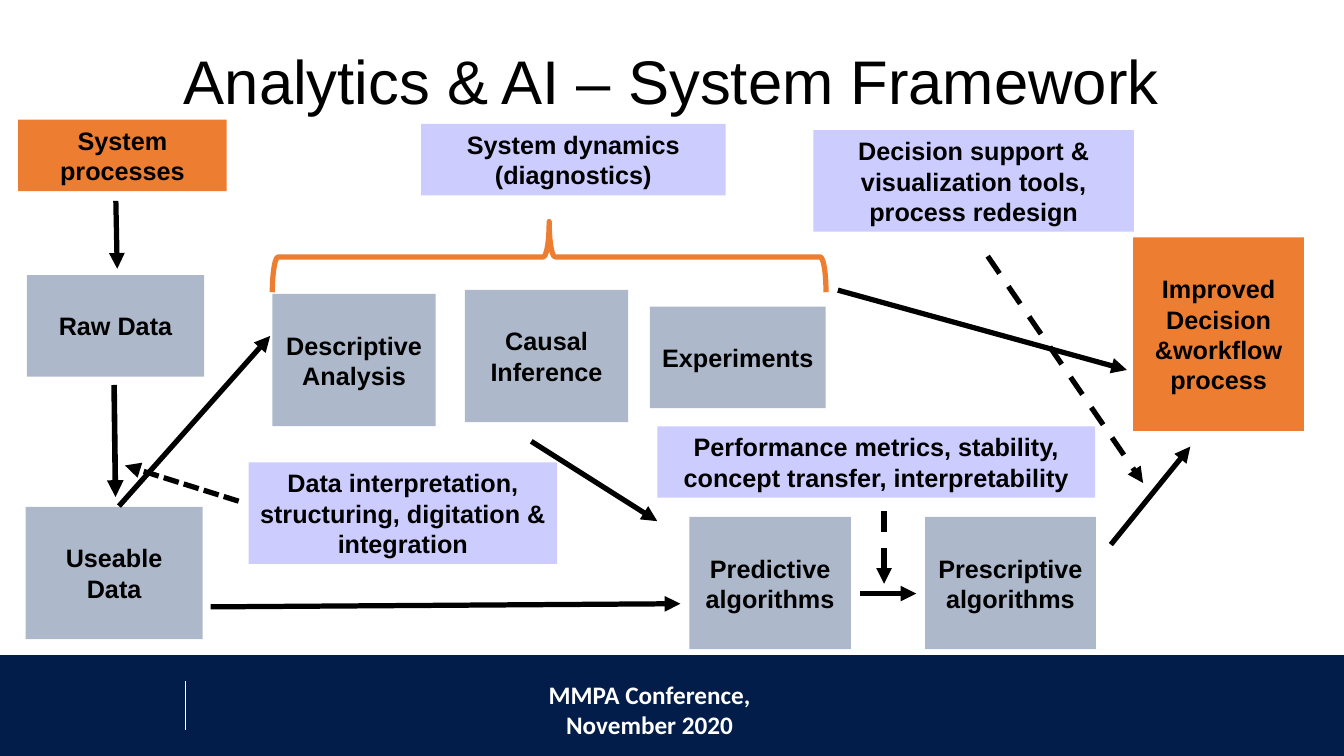
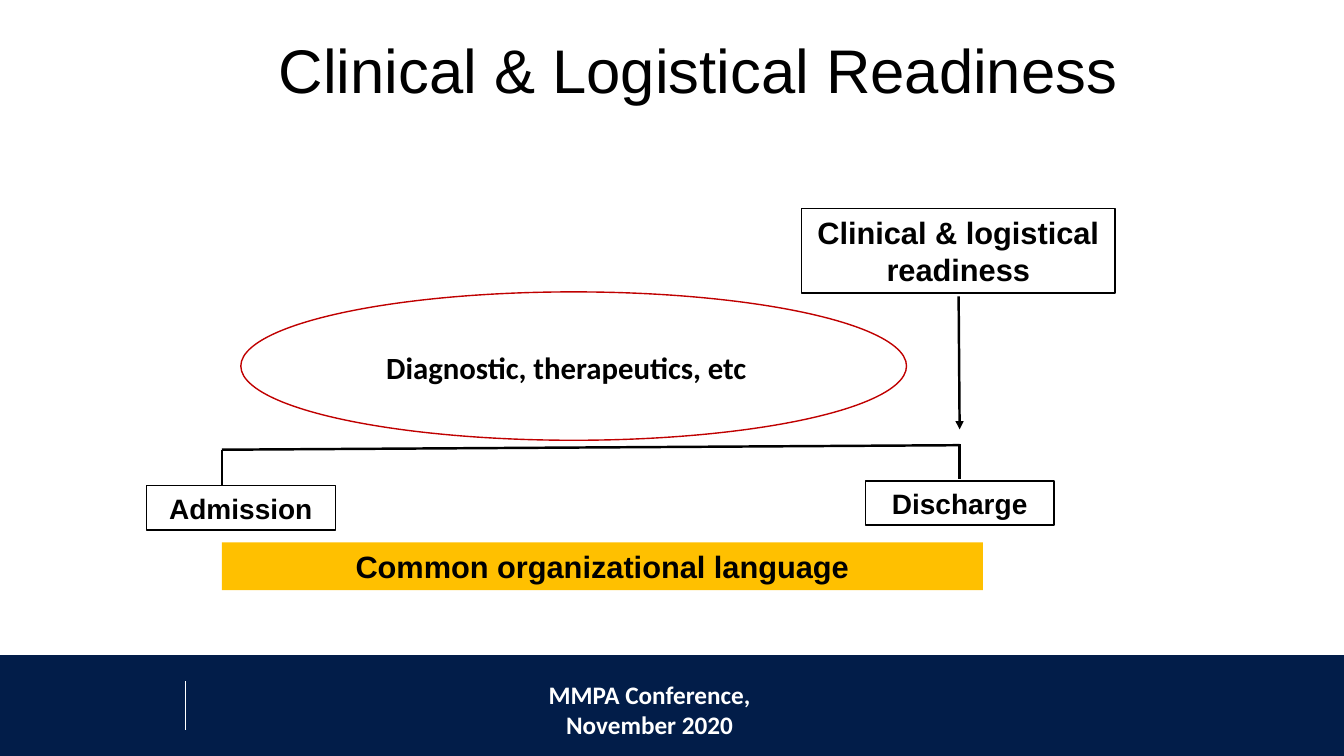
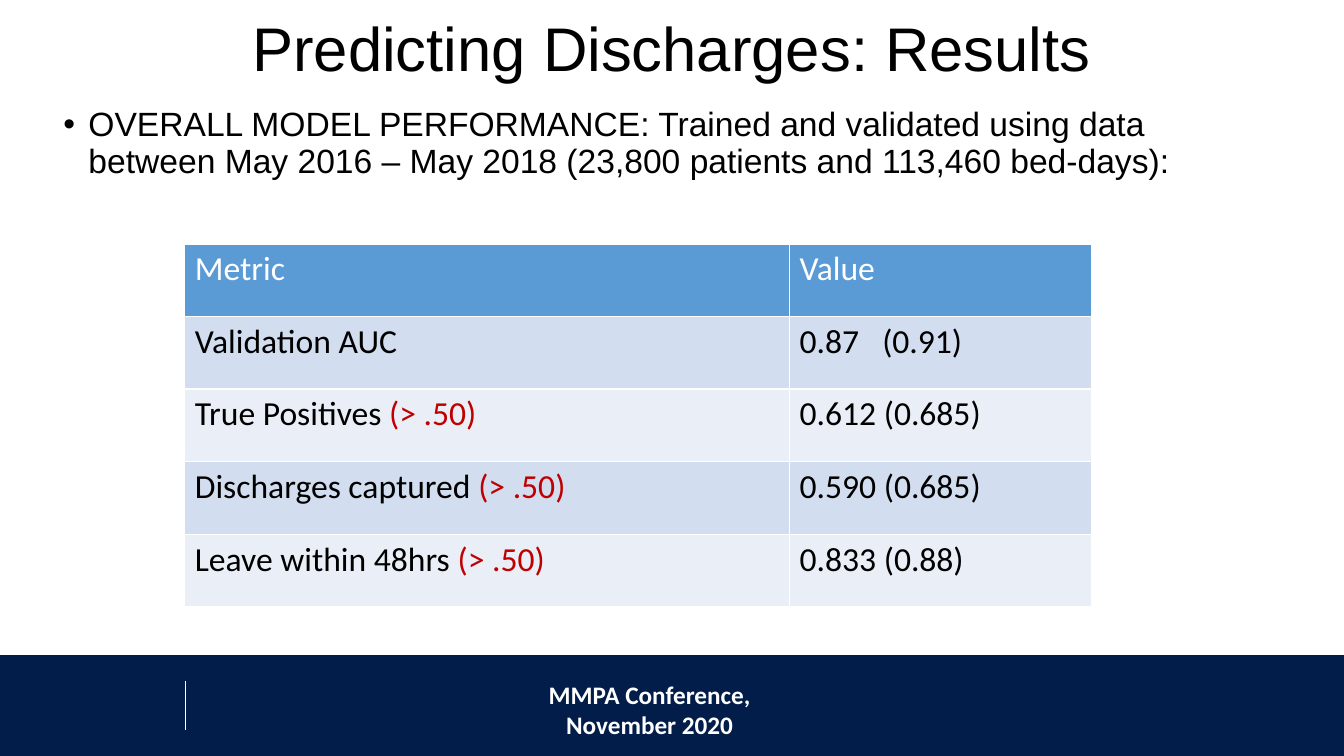
from lxml import etree
from pptx import Presentation
from pptx.dml.color import RGBColor
from pptx.enum.dml import MSO_LINE_DASH_STYLE
from pptx.enum.shapes import MSO_CONNECTOR, MSO_SHAPE
from pptx.enum.text import MSO_ANCHOR, MSO_AUTO_SIZE, PP_ALIGN
from pptx.oxml.ns import qn
from pptx.util import Pt

RECT, OVAL, BRACE = MSO_SHAPE.RECTANGLE, MSO_SHAPE.OVAL, MSO_SHAPE.LEFT_BRACE
STRAIGHT = MSO_CONNECTOR.STRAIGHT
DASH, SHORT_DASH = MSO_LINE_DASH_STYLE.DASH, MSO_LINE_DASH_STYLE.SQUARE_DOT
CENTER, LEFT = PP_ALIGN.CENTER, PP_ALIGN.LEFT
MIDDLE, TOP = MSO_ANCHOR.MIDDLE, MSO_ANCHOR.TOP
NO_FIT = MSO_AUTO_SIZE.NONE

THEME = {
    "colors": {
        name: RGBColor.from_string(code)
        for name, code in {
            "navy": "021D49", "white": "FFFFFF", "black": "000000",
            "slate": "ADB9CA", "orange": "ED7D31", "lilac": "CCCCFF",
            "red": "C00000", "gold": "FFC000", "header": "5B9BD5",
            "band": "D2DEEF", "pale": "EAEFF7",
        }.items()
    },
    "text": {
        "title": {"name": "Arial", "size": Pt(44), "bold": False},
        "bullet": {"name": "Arial", "size": Pt(24), "bold": False},
        "cell": {"name": "Calibri", "size": Pt(24), "bold": False},
        "footer": {"name": "Calibri", "size": Pt(18), "bold": True},
        "step": {"name": "Arial", "size": Pt(18), "bold": True},
        "milestone": {"name": "Arial", "size": Pt(20), "bold": True},
        "callout": {"name": "Arial", "size": Pt(22), "bold": True},
        "care": {"name": "Calibri", "size": Pt(22), "bold": True},
    },
}
COLORS = THEME["colors"]


def write_text(para, text, look, color="black"):
    span = para.add_run()
    span.text = text
    for name, value in THEME["text"][look].items():
        setattr(span.font, name, value)
    span.font.color.rgb = COLORS[color]


def add_box(page, kind, at, fill=None, line=None, width=1, lines=(), look="step", color="black"):
    place = [Pt(value) for value in at]
    box = page.shapes.add_shape(kind, *place) if kind else page.shapes.add_textbox(*place)
    box.shadow.inherit = False
    if fill:
        box.fill.solid()
        box.fill.fore_color.rgb = COLORS[fill]
    else:
        box.fill.background()
    if line:
        box.line.color.rgb = COLORS[line]
        box.line.width = Pt(width)
    else:
        box.line.fill.background()
    frame = box.text_frame
    frame.word_wrap = True
    frame.vertical_anchor = MIDDLE
    for number, text in enumerate(lines):
        para = frame.add_paragraph() if number else frame.paragraphs[0]
        para.alignment = CENTER
        write_text(para, text, look, color)
    return box


deck = Presentation()
deck.slide_width, deck.slide_height = Pt(960), Pt(540)
TITLE_BODY, TITLE_ONLY = deck.slide_layouts[1], deck.slide_layouts[5]

pages = []
for layout, title, at in [
    (TITLE_ONLY, "Analytics & AI – System Framework", (0, 17, 960, 87)),
    (TITLE_ONLY, "Clinical & Logistical Readiness", (55.5, 0, 887, 104.5)),
    (TITLE_BODY, "Predicting Discharges: Results", (0, 0, 960, 73.5)),
]:
    page = deck.slides.add_slide(layout)
    heading = page.shapes.title
    heading.left, heading.top, heading.width, heading.height = [Pt(value) for value in at]
    heading.text_frame.auto_size = NO_FIT
    heading.text_frame.vertical_anchor = MIDDLE
    para = heading.text_frame.paragraphs[0]
    para.alignment = CENTER
    para.line_spacing = 0.9
    write_text(para, title, "title")
    pages.append(page)
framework, readiness, results = pages

footer_band = add_box(framework, RECT, (0, 468, 960, 72), "navy")
footer_text = add_box(framework, None, (244, 481, 440, 51),
                      lines=("MMPA Conference,", "November 2020"), look="footer", color="white")

for fill, at, text in [
    ("slate", (19.25, 196.5, 126.5, 72.5), "Raw Data"),
    ("slate", (18.25, 362, 126.5, 94.5), "Useable Data"),
    ("slate", (194.5, 210, 116.75, 94.5), "Descriptive Analysis"),
    ("slate", (332, 207, 116.75, 94.5), "Causal Inference"),
    ("slate", (464.25, 219, 125.5, 72.5), "Experiments"),
    ("slate", (492.5, 369.25, 115.25, 94.5), "Predictive algorithms"),
    ("slate", (660.75, 369.25, 122, 94.5), "Prescriptive algorithms"),
    ("orange", (809.5, 169.5, 122, 138.25), "Improved Decision &workflow process"),
    ("orange", (13, 85.5, 149, 51), "System processes"),
    ("lilac", (177.5, 330.25, 220.5, 72.5), "Data interpretation, structuring, digitation & integration"),
    ("lilac", (300.75, 88.5, 217.5, 51), "System dynamics (diagnostics)"),
    ("lilac", (581, 93, 229, 72.5), "Decision support & visualization tools, process redesign"),
    ("lilac", (469.5, 304.5, 312.75, 51), "Performance metrics, stability, concept transfer, interpretability"),
]:
    add_box(framework, RECT, at, fill, lines=[text])

brace = add_box(framework, BRACE, (367, -14.25, 50.5, 395.5), line="orange", width=3.75)
brace.rotation = 90

for kind, at, fill, line, text, look in [
    (RECT, (104.5, 347, 135, 31.5), None, "black", "Admission", "milestone"),
    (RECT, (618, 343.5, 135, 31.5), None, "black", "Discharge", "milestone"),
    (None, (211, 245, 387, 34), None, None, "Diagnostic, therapeutics, etc", "care"),
    (OVAL, (172, 208.5, 475.5, 106), None, "red", None, None),
    (RECT, (572.5, 149, 224, 60.5), None, "black", "Clinical & logistical readiness", "callout"),
    (RECT, (158.5, 387.5, 543.5, 34), "gold", None, "Common organizational language", "callout"),
]:
    add_box(readiness, kind, at, fill, line, lines=[text] if text else (), look=look)

connectors = []
for page, points, color, width, dash, arrow in [
    (framework, (132.5, 486.5, 132.5, 521.5), "white", 0.5, None, False),
    (framework, (81.5, 275, 82.5, 355), "black", 4, None, True),
    (framework, (82.75, 143.5, 83.75, 192), "black", 3.75, None, True),
    (framework, (170.5, 358, 89.25, 332.5), "black", 3.75, SHORT_DASH, True),
    (framework, (85, 361.5, 193, 240), "black", 3.75, None, True),
    (framework, (150.5, 433.5, 486, 431.25), "black", 3.75, None, True),
    (framework, (379.5, 315.25, 469.5, 372.25), "black", 3.75, None, True),
    (framework, (614, 424, 654.5, 424), "black", 3.75, None, True),
    (framework, (793.5, 389, 850.25, 319), "black", 3.75, None, True),
    (framework, (705.5, 183, 816.5, 345), "black", 3.75, DASH, True),
    (framework, (631.5, 365, 631.5, 417), "black", 3.75, DASH, True),
    (framework, (598.5, 207.25, 805, 264.25), "black", 3.75, None, True),
    (readiness, (158.5, 321.25, 685.5, 318), "black", 1.75, None, False),
    (readiness, (158.5, 321.25, 158.5, 346.25), "black", 1.75, None, False),
    (readiness, (685.5, 317.5, 685.5, 342), "black", 1.75, None, False),
    (readiness, (684.75, 211.75, 685.5, 306.75), "black", 1.75, None, True),
]:
    connector = page.shapes.add_connector(STRAIGHT, *[Pt(value) for value in points])
    connector.line.color.rgb = COLORS[color]
    connector.line.width = Pt(width)
    if dash:
        connector.line.dash_style = dash
    properties = connector.element.spPr
    if arrow:
        etree.SubElement(properties.find(qn("a:ln")), qn("a:tailEnd"), type="triangle")
    etree.SubElement(properties, qn("a:effectLst"))
    connectors.append(connector)

for number, part in enumerate([footer_band, connectors[0], footer_text], 101):
    part.element.xpath(".//p:cNvPr")[0].set("id", str(number))
    deck.slide_master.shapes.element.append(part.element)

body = results.placeholders[1]
body.left, body.top, body.width, body.height = Pt(38), Pt(73.5), Pt(865.5), Pt(342.5)
body.text_frame.auto_size = NO_FIT
body.text_frame.vertical_anchor = TOP
para = body.text_frame.paragraphs[0]
para.alignment = LEFT
para.line_spacing = 0.9
para.space_before = Pt(0)
layout_marks = para._p.get_or_add_pPr()
layout_marks.set("marL", str(Pt(18)))
layout_marks.set("indent", str(Pt(-18)))
etree.SubElement(layout_marks, qn("a:buFont"), typeface="Arial")
etree.SubElement(layout_marks, qn("a:buChar"), char="•")
write_text(para, "OVERALL MODEL PERFORMANCE: Trained and validated using data between "
                 "May 2016 – May 2018 (23,800 patients and 113,460 bed-days):", "bullet")

ROWS = [
    ("Metric", "", "Value"),
    ("Validation AUC", "", "0.87\t(0.91)"),
    ("True Positives ", "(> .50)", "0.612 (0.685)"),
    ("Discharges captured ", "(> .50)", "0.590 (0.685)"),
    ("Leave within 48hrs ", "(> .50)", "0.833 (0.88)"),
]
table = results.shapes.add_table(len(ROWS), 2, Pt(132), Pt(174.25), Pt(648), Pt(259.2)).table
table.columns[0].width, table.columns[1].width = Pt(432), Pt(216)
for number, (metric, threshold, value) in enumerate(ROWS):
    fill = ("pale", "band")[number % 2] if number else "header"
    color = "black" if number else "white"
    for column, text in enumerate((metric, value)):
        cell = table.cell(number, column)
        cell.fill.solid()
        cell.fill.fore_color.rgb = COLORS[fill]
        para = cell.text_frame.paragraphs[0]
        if "\t" in text:
            stops = etree.SubElement(para._p.get_or_add_pPr(), qn("a:tabLst"))
            etree.SubElement(stops, qn("a:tab"), pos=str(Pt(59)), algn="l")
        write_text(para, text, "cell", color)
        if column == 0 and threshold:
            write_text(para, threshold, "cell", "red")

deck.save("out.pptx")
